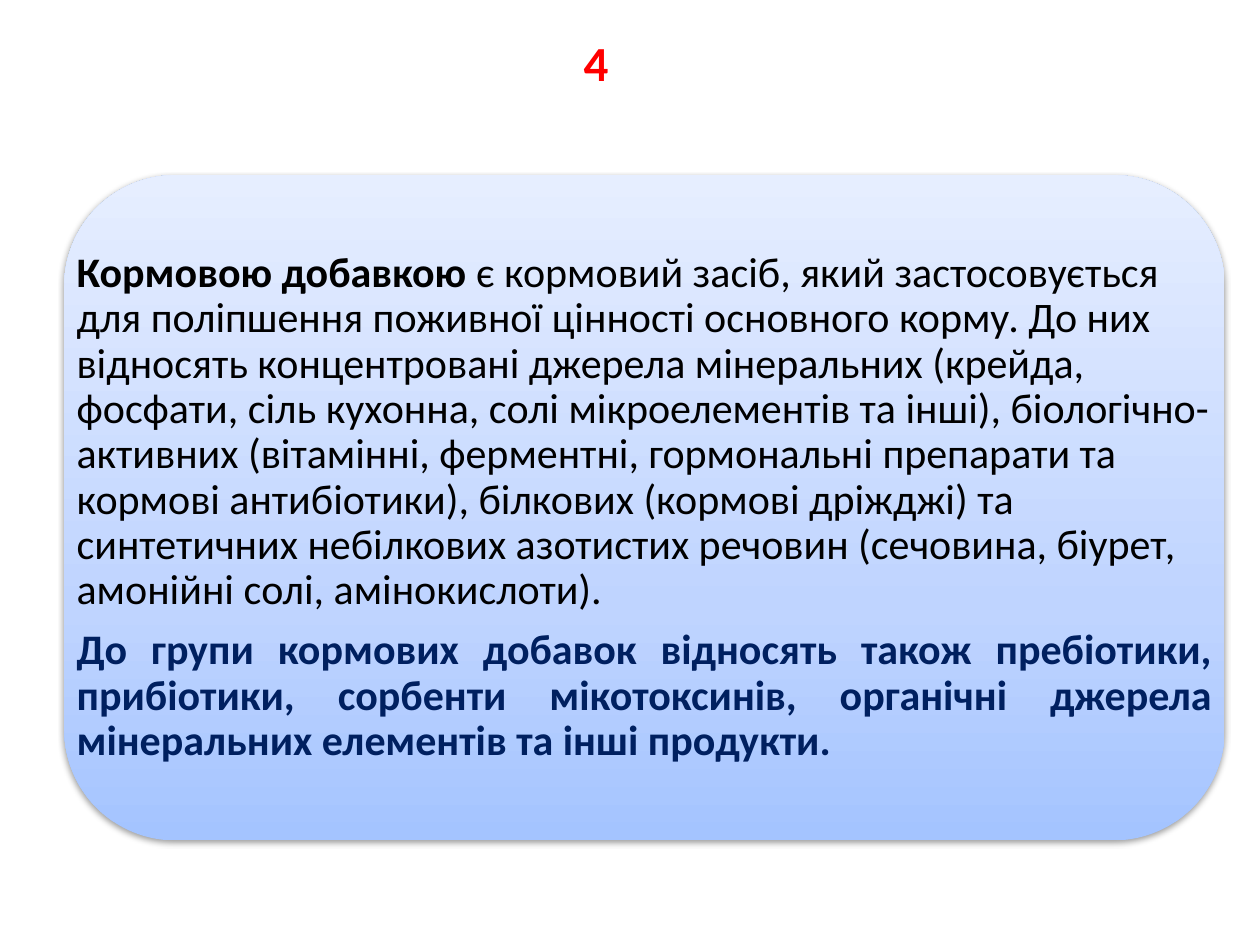
from lxml.etree import SubElement
from pptx import Presentation
from pptx.dml.color import RGBColor
from pptx.enum.shapes import MSO_SHAPE as Shape
from pptx.enum.text import MSO_ANCHOR as Anchor, MSO_AUTO_SIZE as AutoSize, PP_ALIGN as Align
from pptx.oxml.ns import qn
from pptx.util import Inches, Pt

COLORS = {"number": "FF0000", "text": "000000", "accent": "002060", "shadow": "000000"}
PANEL_STOPS = [(0, "A4C4FF"), (35, "BFD4FF"), (100, "E6EEFF")]
PANEL_BOX = (0.51, 1.39, 9.21, 5.28)
NUMBER_BOX = (4.53, 0.21, 0.4, 0.57)
NUMBER = (Align.CENTER, [("4", "number", True)])
DEFINITION = [
    (Align.LEFT, [
        ("Кормовою добавкою ", "text", True),
        ("є кормовий засіб, який застосовується для поліпшення поживної цінності "
         "основного корму. До них відносять концентровані джерела мінеральних (крейда, "
         "фосфати, сіль кухонна, солі мікроелементів та інші), біологічно-активних "
         "(вітамінні, ферментні, гормональні препарати та кормові антибіотики), білкових "
         "(кормові дріжджі) та синтетичних небілкових азотистих речовин (сечовина, біурет, "
         "амонійні солі, амінокислоти).", "text", False),
    ]),
    (Align.JUSTIFY, [
        ("До групи кормових добавок відносять також пребіотики, прибіотики, сорбенти "
         "мікотоксинів, органічні джерела мінеральних елементів та інші продукти.",
         "accent", True),
    ]),
]


def add_color(parent, color):
    return SubElement(parent, qn("a:srgbClr"), val=color)


def add_panel(slide):
    panel = slide.shapes.add_shape(Shape.ROUNDED_RECTANGLE, *map(Inches, PANEL_BOX))
    panel.line.fill.background()
    panel.fill.gradient()
    panel.fill.gradient_angle = 90
    properties = panel.element.spPr
    stops = properties.find(".//" + qn("a:gsLst"))
    stops.clear()
    for position, color in PANEL_STOPS:
        add_color(SubElement(stops, qn("a:gs"), pos=str(position * 1000)), color)
    panel.shadow.inherit = False
    shadow = SubElement(properties.find(qn("a:effectLst")), qn("a:outerShdw"),
                        blurRad=str(Pt(3.1)), dist=str(Pt(1.6)), dir="5400000", rotWithShape="0")
    SubElement(add_color(shadow, COLORS["shadow"]), qn("a:alpha"), val="38000")


def add_text(slide, box, paragraphs, size, wrap=True):
    frame = slide.shapes.add_textbox(*map(Inches, box)).text_frame
    frame.word_wrap = wrap
    for index, (alignment, runs) in enumerate(paragraphs):
        paragraph = frame.add_paragraph() if index else frame.paragraphs[0]
        paragraph.alignment = alignment
        for text, color, bold in runs:
            run = paragraph.add_run()
            run.text = text
            run.font.name = "Calibri"
            run.font.size = Pt(size)
            run.font.bold = bold
            run.font.color.rgb = RGBColor.from_string(COLORS[color])
    return frame


def main():
    """Build the slide that defines feed additives."""
    presentation = Presentation()
    presentation.slide_width, presentation.slide_height = Inches(10), Inches(7.5)
    slide = presentation.slides.add_slide(presentation.slide_layouts[6])
    add_panel(slide)
    definition = add_text(slide, PANEL_BOX, DEFINITION, 24)
    definition.vertical_anchor = Anchor.MIDDLE
    definition.margin_left = definition.margin_right = Inches(0.1)
    definition.margin_top = definition.margin_bottom = Inches(0.1)
    for paragraph in definition.paragraphs:
        paragraph.line_spacing = 0.9
        paragraph.space_after = Pt(8.4)
    number = add_text(slide, NUMBER_BOX, [NUMBER], 28, wrap=False)
    number.auto_size = AutoSize.SHAPE_TO_FIT_TEXT
    presentation.save("out.pptx")


if __name__ == "__main__":
    main()
